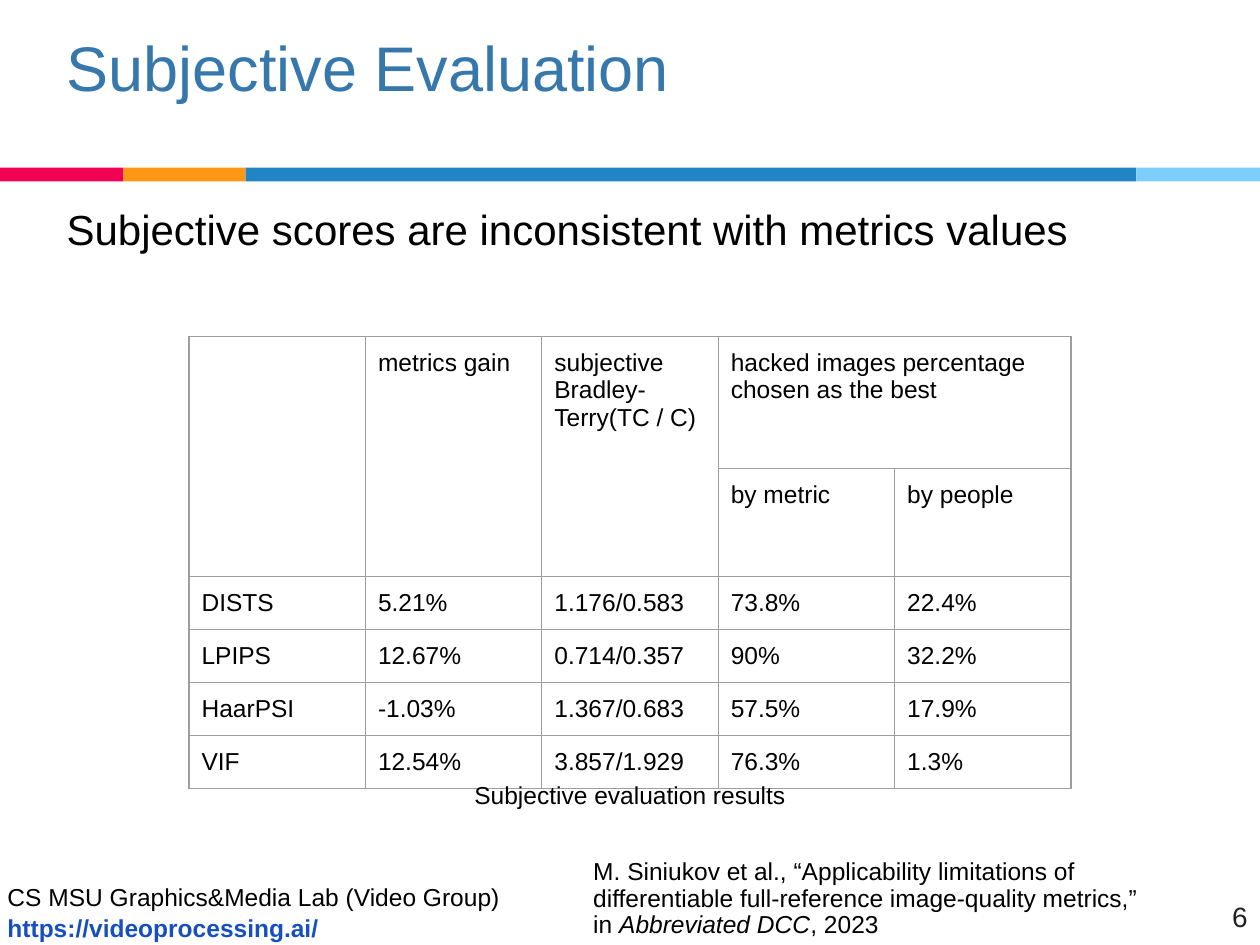
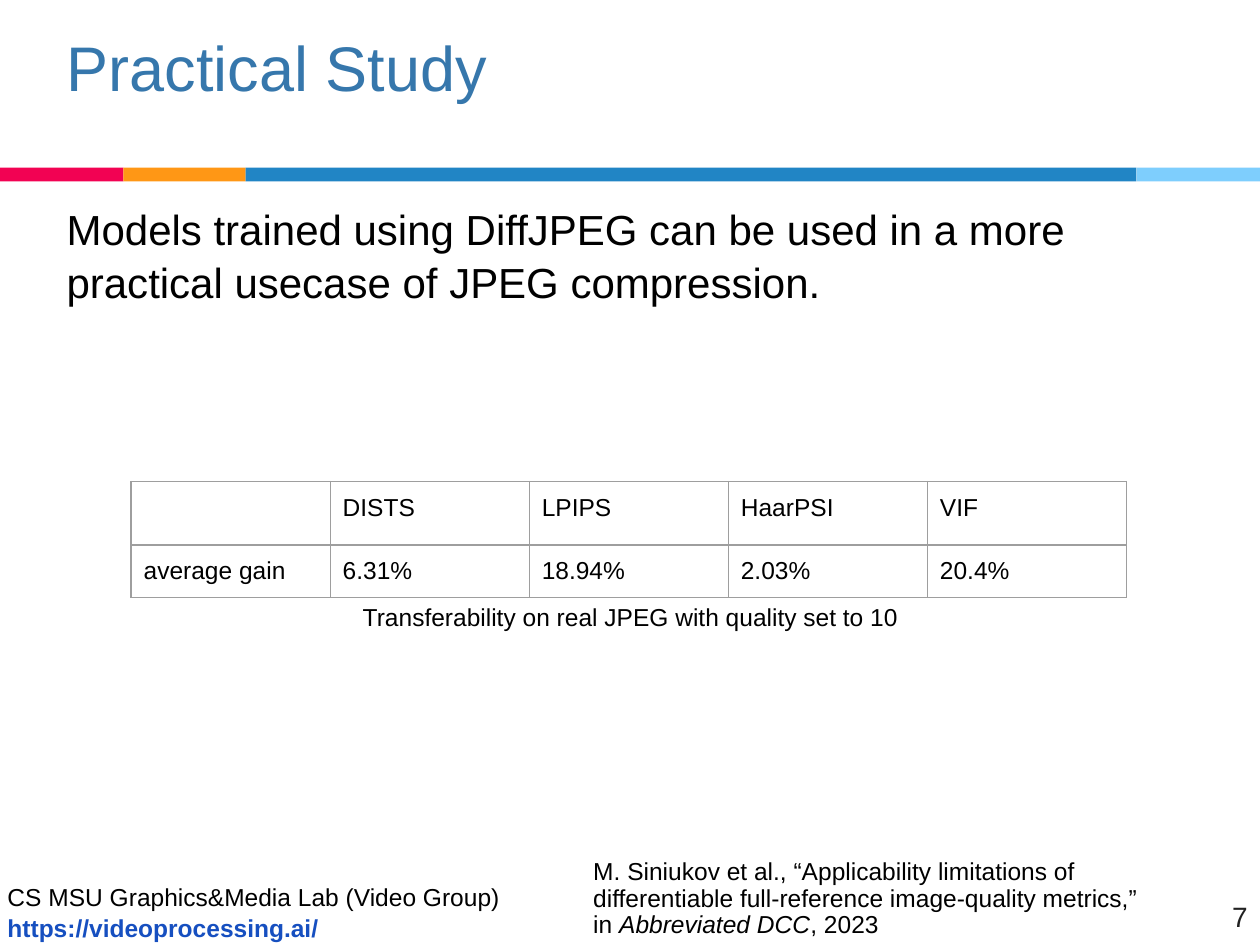
import pptx
import pptx.dml.color
import pptx.enum.shapes
import pptx.enum.text
import pptx.oxml
import pptx.oxml.ns
import pptx.util
from pptx.util import Inches

ALIGN = pptx.enum.text.PP_ALIGN
ANCHOR = pptx.enum.text.MSO_ANCHOR
TITLE_ONLY = 5

BANDS = [(0, 0.98, "F20253"), (0.98, 0.97, "FF9715"),
         (1.95, 7.07, "2185C5"), (9.02, 0.98, "7ECEFD")]


def rgb(value):
    return pptx.dml.color.RGBColor.from_string(value)


def write(tf, paragraphs, size=14, color="000000", align=ALIGN.LEFT,
          anchor=ANCHOR.TOP, spacing=None, insets=(0.1, 0.05, 0.1, 0.05)):
    tf.word_wrap = True
    tf.auto_size = pptx.enum.text.MSO_AUTO_SIZE.NONE
    tf.vertical_anchor = anchor
    tf.margin_left, tf.margin_top, tf.margin_right, tf.margin_bottom = map(Inches, insets)
    if isinstance(paragraphs, str):
        paragraphs = [[(paragraphs, {})]]
    for i, runs in enumerate(paragraphs):
        p = tf.add_paragraph() if i else tf.paragraphs[0]
        p.alignment = align
        p.space_before = pptx.util.Pt(0)
        if spacing:
            p.line_spacing = spacing
        for text, style in runs:
            r = p.add_run()
            r.text = text
            r.font.name = "Arial"
            r.font.size = pptx.util.Pt(size)
            r.font.color.rgb = rgb(style.get("color", color))
            r.font.bold = style.get("bold", False)
            r.font.italic = style.get("italic", False)


class Deck:
    border_color = "9E9E9E"
    title_color = "3677AC"
    number_color = "212121"

    def __init__(self):
        self.prs = pptx.Presentation()
        self.prs.slide_width = Inches(10)
        self.prs.slide_height = Inches(7.5)
        self.s = None

    def slide(self, title, statement, number):
        self.s = self.prs.slides.add_slide(self.prs.slide_layouts[TITLE_ONLY])
        for left, width, color in BANDS:
            self.band(left, width, color)
        self.title(title)
        self.text(0.43, 1.55, 9.29, 5.12, statement, size=24, spacing=1.05)
        self.footer(number)

    def title(self, text):
        sp = self.s.shapes.title
        sp.left, sp.top, sp.width, sp.height = map(Inches, (0.43, 0.05, 8.34, 1.25))
        write(sp.text_frame, text, size=36, color=self.title_color,
              anchor=ANCHOR.BOTTOM, insets=(0.1, 0.05, 0.1, 0.47))

    def band(self, left, width, color):
        sp = self.s.shapes.add_shape(pptx.enum.shapes.MSO_SHAPE.RECTANGLE,
                                     Inches(left), Inches(1.33), Inches(width), Inches(0.11))
        sp.shadow.inherit = False
        sp.fill.solid()
        sp.fill.fore_color.rgb = rgb(color)
        sp.line.fill.background()

    def text(self, left, top, width, height, paragraphs, **style):
        sp = self.s.shapes.add_textbox(Inches(left), Inches(top), Inches(width), Inches(height))
        write(sp.text_frame, paragraphs, **style)

    def footer(self, number):
        self.text(0.01, 6.94, 4.03, 0.57,
                  [[("CS MSU Graphics&Media Lab (Video Group)", {})],
                   [("https://videoprocessing.ai/", {"color": "164FC0", "bold": True})]],
                  insets=(0.05, 0.05, 0.05, 0.05), spacing=1.05)
        self.text(4.61, 6.71, 4.72, 0.79,
                  [[("M. Siniukov et al., “Applicability limitations of differentiable "
                     "full-reference image-quality metrics,” in ", {}),
                    ("Abbreviated DCC", {"italic": True}), (", 2023", {})]],
                  anchor=ANCHOR.BOTTOM, spacing=0.9)
        self.text(9.36, 7.09, 0.64, 0.34, str(number), size=16,
                  color=self.number_color, align=ALIGN.RIGHT)

    def caption(self, left, top, width, text):
        self.text(left, top, width, 0.44, text, align=ALIGN.CENTER,
                  insets=(0.1, 0.1, 0.1, 0.1))

    def table(self, left, top, col_width, row_heights, rows, merges=()):
        n_cols = len(rows[0])
        table = self.s.shapes.add_table(
            len(rows), n_cols, Inches(left), Inches(top),
            Inches(col_width * n_cols), Inches(sum(row_heights))).table
        table.first_row = table.horz_banding = False
        for column in table.columns:
            column.width = Inches(col_width)
        for row, height in zip(table.rows, row_heights):
            row.height = Inches(height)
        for first, last in merges:
            table.cell(*first).merge(table.cell(*last))
        for i, values in enumerate(rows):
            for j, value in enumerate(values):
                self.cell(table.cell(i, j), value)

    def cell(self, cell, value):
        if value:
            write(cell.text_frame, value)
        cell.vertical_anchor = ANCHOR.TOP
        cell.margin_left = cell.margin_right = Inches(0.1)
        cell.margin_top = cell.margin_bottom = Inches(0.1)
        tc_pr = cell._tc.get_or_add_tcPr()
        for side in ("lnL", "lnR", "lnT", "lnB"):
            tc_pr.append(pptx.oxml.parse_xml(
                f'<a:{side} {pptx.oxml.ns.nsdecls("a")} w="9525"><a:solidFill>'
                f'<a:srgbClr val="{self.border_color}"/></a:solidFill></a:{side}>'))
        cell.fill.background()


def main():
    deck = Deck()

    deck.slide("Subjective Evaluation",
               "Subjective scores are inconsistent with metrics values", 6)
    deck.table(1.5, 2.67, 1.4, [1.05, 0.85] + [0.42] * 4, [
        ["", "metrics gain", "subjective Bradley-Terry(TC / C)",
         "hacked images percentage chosen as the best", ""],
        ["", "", "", "by metric", "by people"],
        ["DISTS", "5.21%", "1.176/0.583", "73.8%", "22.4%"],
        ["LPIPS", "12.67%", "0.714/0.357", "90%", "32.2%"],
        ["HaarPSI", "-1.03%", "1.367/0.683", "57.5%", "17.9%"],
        ["VIF", "12.54%", "3.857/1.929", "76.3%", "1.3%"],
    ], merges=[((0, j), (1, j)) for j in range(3)] + [((0, 3), (0, 4))])
    deck.caption(2.79, 6.09, 4.42, "Subjective evaluation results")

    deck.slide("Practical Study",
               "Models trained using DiffJPEG can be used in a more practical "
               "usecase of JPEG compression.", 7)
    deck.table(1.04, 3.82, 1.58, [0.48, 0.42], [
        ["", "DISTS", "LPIPS", "HaarPSI", "VIF"],
        ["average gain", "6.31%", "18.94%", "2.03%", "20.4%"],
    ])
    deck.caption(2.67, 4.68, 4.67, "Transferability on real JPEG with quality set to 10")

    deck.prs.save("out.pptx")


if __name__ == "__main__":
    main()
